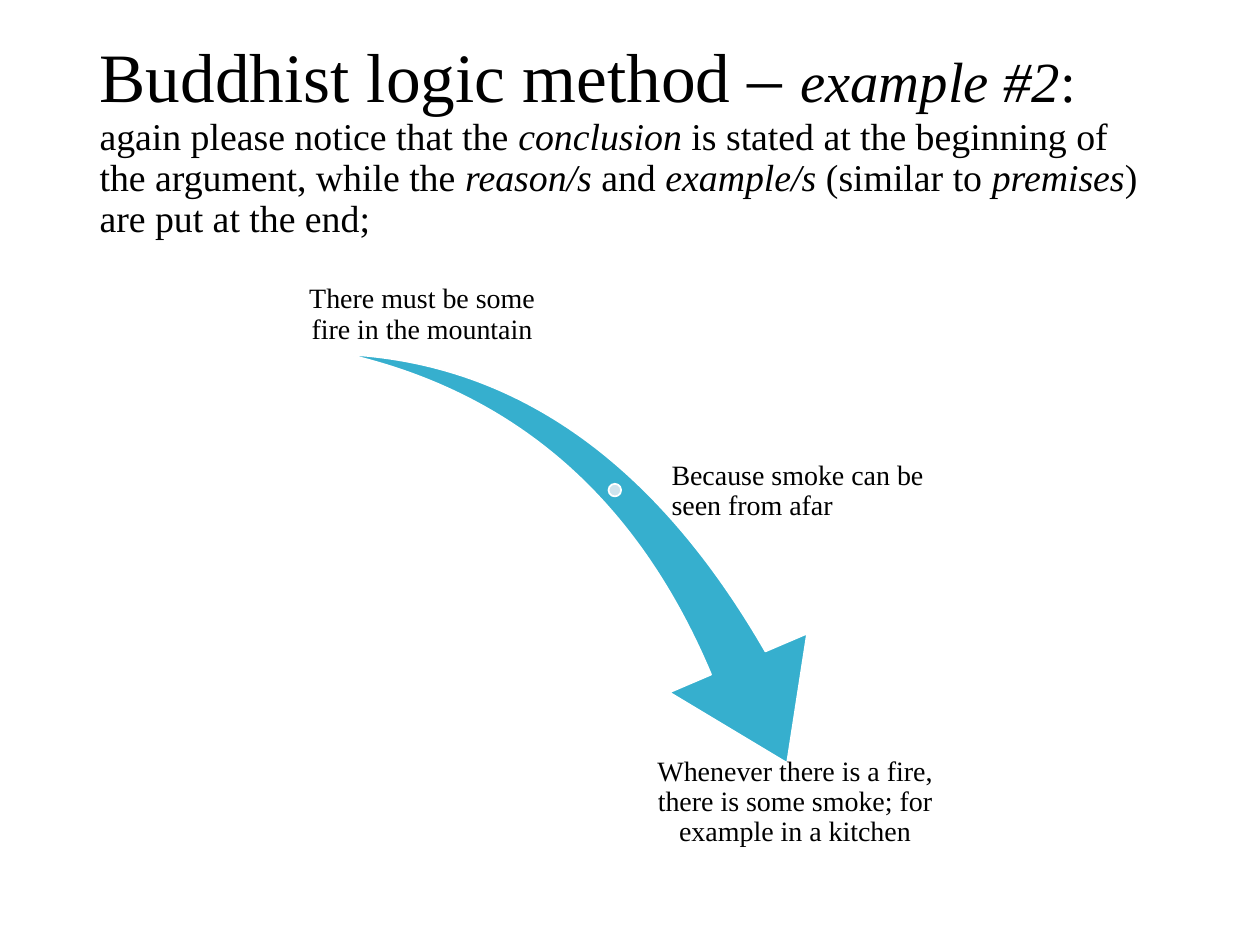
import pptx
import pptx.dml.color
import pptx.enum.shapes
import pptx.enum.text
import pptx.util

Inches = pptx.util.Inches
SHAPE = pptx.enum.shapes.MSO_SHAPE
ALIGN = pptx.enum.text.PP_ALIGN
ANCHOR = pptx.enum.text.MSO_ANCHOR
FONT = "Times New Roman"


def color(hex_text):
    return pptx.dml.color.RGBColor.from_string(hex_text)


def add_span(para, text, size=16, italic=False):
    span = para.add_run()
    span.text = text
    span.font.name = FONT
    span.font.size = pptx.util.Pt(size)
    span.font.italic = italic
    span.font.color.rgb = color("000000")


def fill_title(title):
    title.left, title.top = Inches(0.69), Inches(0.4)
    title.width, title.height = Inches(8.62), Inches(1.45)
    frame = title.text_frame
    frame.word_wrap = True
    frame.auto_size = pptx.enum.text.MSO_AUTO_SIZE.NONE
    frame.vertical_anchor = ANCHOR.MIDDLE
    para = frame.paragraphs[0]
    para.alignment = ALIGN.LEFT
    para.line_spacing = 0.9
    add_span(para, "Buddhist logic method – ", size=39.6)
    add_span(para, "example #2", size=32.4, italic=True)
    add_span(para, ": ", size=32.4)
    explanation = [
        ("again please notice that the ", False),
        ("conclusion", True),
        (" is stated at the beginning of the argument, while the ", False),
        ("reason/s", True),
        (" and ", False),
        ("example/s", True),
        (" (similar to ", False),
        ("premises", True),
        (") are put at the end;", False),
    ]
    for text, italic in explanation:
        add_span(para, text, size=21.6, italic=italic)


def add_figure(group, kind, left, top, width, height, fill):
    figure = group.shapes.add_shape(
        kind, Inches(left), Inches(top), Inches(width), Inches(height))
    figure.shadow.inherit = False
    figure.fill.solid()
    figure.fill.fore_color.rgb = color(fill)
    figure.line.color.rgb = color("FFFFFF")
    figure.line.width = pptx.util.Pt(1)
    return figure


def add_label(group, text, left, top, width, align=ALIGN.CENTER, anchor=ANCHOR.TOP):
    box = group.shapes.add_textbox(
        Inches(left), Inches(top), Inches(width), Inches(0.76))
    frame = box.text_frame
    frame.word_wrap = True
    frame.vertical_anchor = anchor
    frame.margin_left = frame.margin_right = Inches(0.02)
    frame.margin_top = frame.margin_bottom = Inches(0.02)
    para = frame.paragraphs[0]
    para.alignment = align
    para.line_spacing = 0.9
    add_span(para, text)


def main():
    deck = pptx.Presentation()
    deck.slide_width, deck.slide_height = Inches(10), Inches(7.5)
    page = deck.slides.add_slide(deck.slide_layouts[5])
    fill_title(page.shapes.title)

    diagram = page.shapes.add_group_shape()
    arrow = add_figure(diagram, SHAPE.SWOOSH_ARROW, 2.66, 2.94, 4.11, 2.86, "36AFCE")
    arrow.rotation = 73.3
    arrow.adjustments[0] = 0.163
    arrow.adjustments[1] = 0.314
    add_figure(diagram, SHAPE.OVAL, 4.83, 3.84, 0.1, 0.1, "CEE3ED")

    add_label(diagram, "There must be some fire in the mountain",
              2.38, 2, 1.94, anchor=ANCHOR.BOTTOM)
    add_label(diagram, "Because smoke can be seen from afar",
              5.31, 3.52, 2.3, align=ALIGN.LEFT, anchor=ANCHOR.MIDDLE)
    add_label(diagram,
              "Whenever there is a fire, there is some smoke; for example in a kitchen",
              5, 5.99, 2.62)

    deck.save("out.pptx")


if __name__ == "__main__":
    main()
